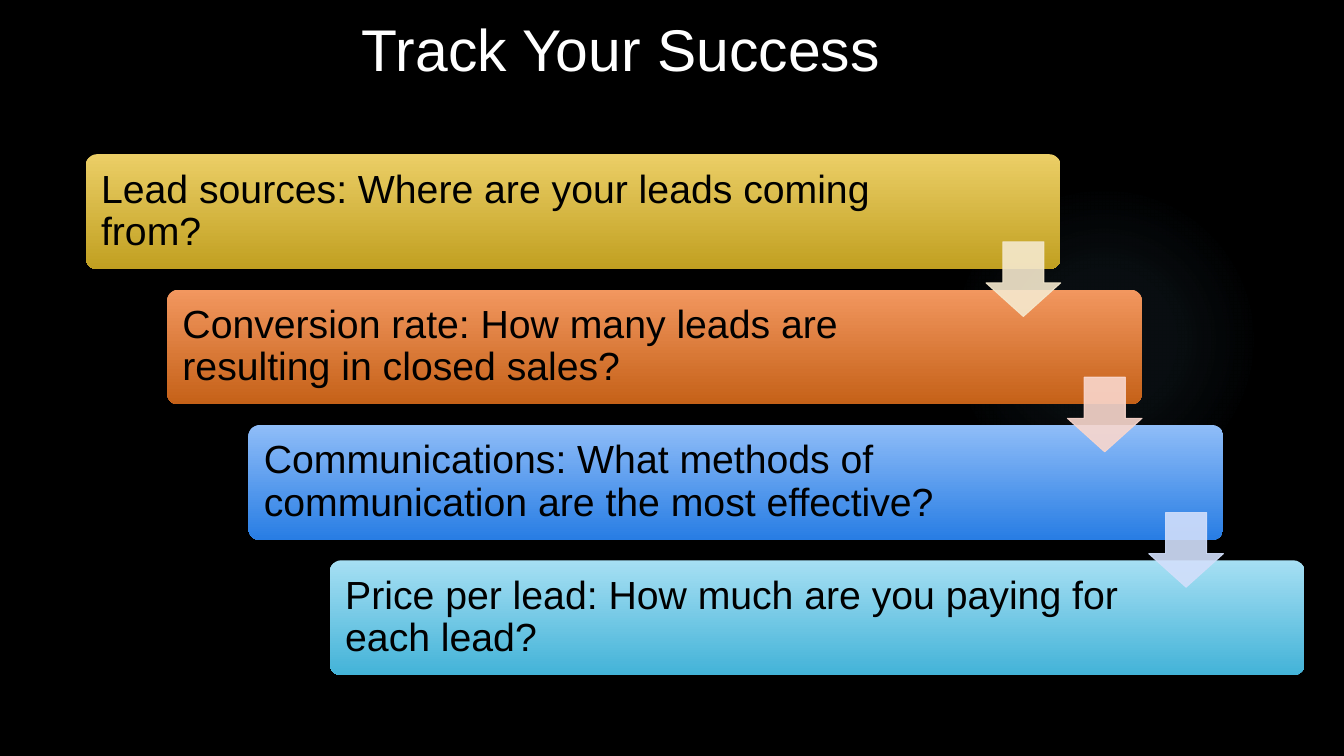
from lxml import etree
from pptx import Presentation
from pptx import util as u
from pptx.dml.color import RGBColor
from pptx.enum import shapes, text
from pptx.oxml import ns

COLORS = {"back": "000000", "title": "FFFFFF", "text": "000000", "glow": "7AC4F0"}
FONT = "Arial"
LEFT, TOP = 0.85, 1.53
STEP_X, STEP_Y = 0.807, 1.343
CARD_W, CARD_H = 9.67, 1.14
ARROW = 0.74
METRICS = [
    ("Lead sources: Where are your leads coming from?", "EBCE66", "C1A021", "F5E9CE"),
    ("Conversion rate: How many leads are resulting in closed sales?", "F2975F", "C56118", "F9D7CD"),
    ("Communications: What methods of communication are the most effective?", "8FBDF8", "287DE4", "D2DFFB"),
    ("Price per lead: How much are you paying for each lead?", "A6DFF3", "43B3D8", None),
]


def rgb(value):
    """Turn a hex string into a colour."""
    return RGBColor.from_string(value)


def add_preset(slide, kind, left, top, width, height):
    """Add a preset shape, in inches, without shadow or outline."""
    sp = slide.shapes.add_shape(kind, *(u.Inches(v) for v in (left, top, width, height)))
    sp.shadow.inherit = False
    sp.line.fill.background()
    return sp


def set_alpha(color, percent):
    """Set the opacity of a colour element."""
    etree.SubElement(color, ns.qn("a:alpha")).set("val", str(percent * 1000))


def style_text(tf, size, color):
    """Format every run of a text frame."""
    for p in tf.paragraphs:
        for r in p.runs:
            r.font.name = FONT
            r.font.size = u.Pt(size)
            r.font.color.rgb = rgb(color)


def set_title(slide, words):
    """Place and format the slide title."""
    sp = slide.shapes.title
    sp.left, sp.top, sp.width, sp.height = (u.Inches(v) for v in (3.49, 0.03, 10.29, 1.53))
    tf = sp.text_frame
    tf.text = words
    tf.vertical_anchor = text.MSO_ANCHOR.TOP
    tf.margin_top = u.Inches(0.1)
    tf.paragraphs[0].alignment = text.PP_ALIGN.LEFT
    style_text(tf, 42, COLORS["title"])


def add_glow(slide):
    """Add the faint round glow behind the cards."""
    sp = add_preset(slide, shapes.MSO_SHAPE.OVAL, 9.41, 1.83, 3.08, 3.08)
    sp.fill.gradient()
    grad = sp._element.spPr.find(ns.qn("a:gradFill"))
    for child in list(grad):
        grad.remove(child)
    stops = etree.SubElement(grad, ns.qn("a:gsLst"))
    for position, opacity in ((0, 7), (36, 6), (69, 0)):
        stop = etree.SubElement(stops, ns.qn("a:gs"), pos=str(position * 1000))
        set_alpha(etree.SubElement(stop, ns.qn("a:srgbClr"), val=COLORS["glow"]), opacity)
    circle = etree.SubElement(grad, ns.qn("a:path"), path="circle")
    etree.SubElement(circle, ns.qn("a:fillToRect"), l="50000", t="50000", r="50000", b="50000")


def add_card(slide, row, words, light, dark):
    """Add one gradient card of the staircase."""
    sp = add_preset(slide, shapes.MSO_SHAPE.ROUNDED_RECTANGLE,
                    LEFT + row * STEP_X, TOP + row * STEP_Y, CARD_W, CARD_H)
    sp.adjustments[0] = 0.1
    sp.fill.gradient()
    sp.fill.gradient_angle = 270
    for stop, position, color in zip(sp.fill.gradient_stops, (0, 1), (light, dark)):
        stop.position = position
        stop.color.rgb = rgb(color)
    tf = sp.text_frame
    tf.text = words
    tf.word_wrap = True
    tf.vertical_anchor = text.MSO_ANCHOR.MIDDLE
    tf.margin_left = tf.margin_top = tf.margin_bottom = u.Inches(0.12)
    tf.margin_right = u.Inches(1.67)
    p = tf.paragraphs[0]
    p.alignment = text.PP_ALIGN.LEFT
    p.line_spacing = 0.9
    style_text(tf, 28, COLORS["text"])


def add_arrow(slide, row, color):
    """Add the arrow from one card down to the next."""
    sp = add_preset(slide, shapes.MSO_SHAPE.DOWN_ARROW,
                    LEFT + CARD_W - ARROW + row * STEP_X, TOP + 0.87 + row * STEP_Y, ARROW, ARROW)
    sp.adjustments[0], sp.adjustments[1] = 0.55, 0.45
    sp.line.width = u.Pt(0.75)
    for fill in (sp.fill, sp.line.fill):
        fill.solid()
        fill.fore_color.rgb = rgb(color)
    for element in sp._element.spPr.iter(ns.qn("a:srgbClr")):
        set_alpha(element, 90)


def main():
    """Build the slide and save it."""
    prs = Presentation()
    prs.slide_width, prs.slide_height = u.Inches(13.33), u.Inches(7.5)
    slide = prs.slides.add_slide(prs.slide_layouts[5])
    slide.background.fill.solid()
    slide.background.fill.fore_color.rgb = rgb(COLORS["back"])
    set_title(slide, "Track Your Success")
    add_glow(slide)
    for row, (words, light, dark, _) in enumerate(METRICS):
        add_card(slide, row, words, light, dark)
    for row, (*_, color) in enumerate(METRICS[:-1]):
        add_arrow(slide, row, color)
    prs.save("out.pptx")


if __name__ == "__main__":
    main()
